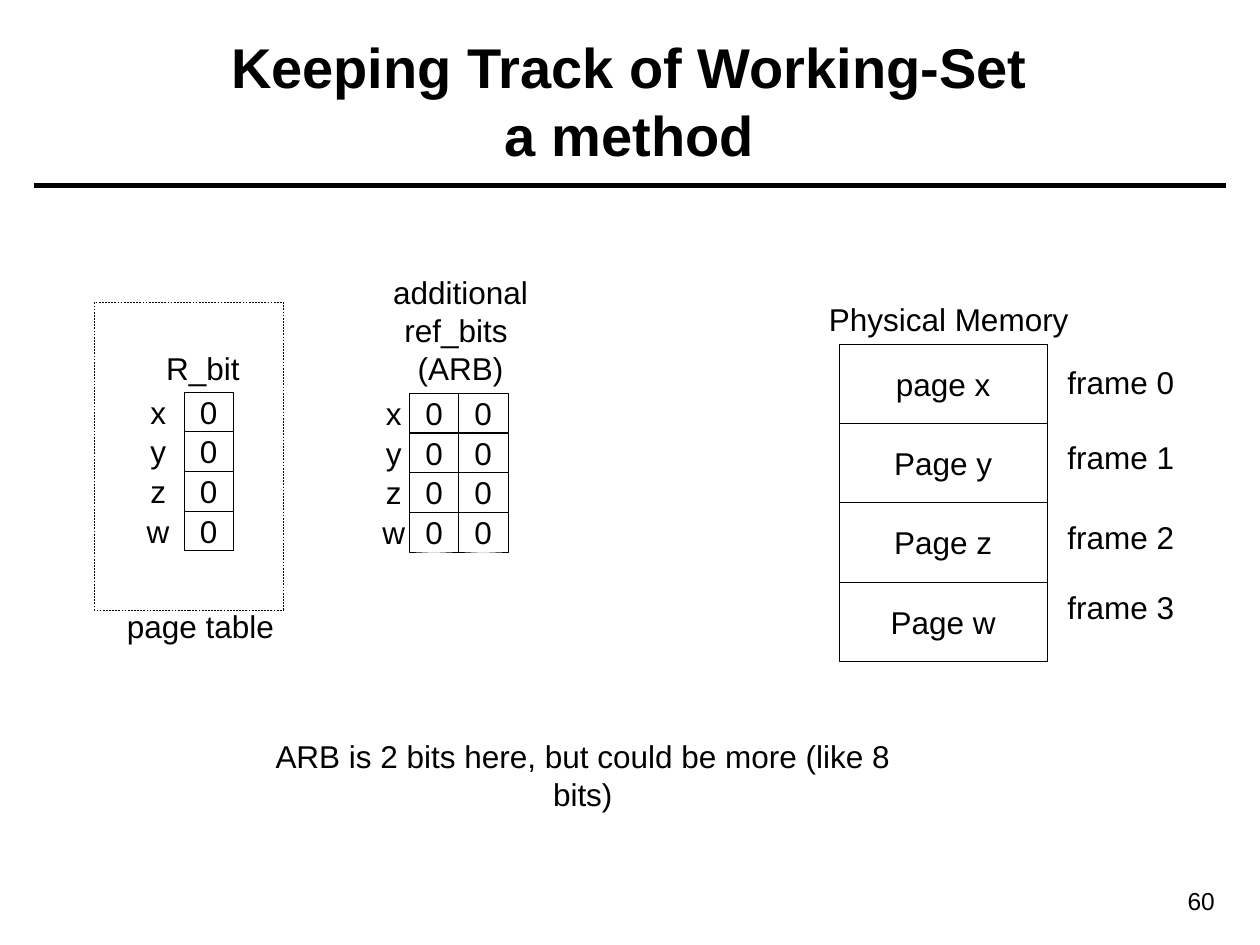
from pptx import Presentation
from pptx.dml.color import RGBColor
from pptx.enum.dml import MSO_LINE
from pptx.enum.shapes import MSO_CONNECTOR, MSO_SHAPE
from pptx.enum.text import MSO_ANCHOR as Anchor, PP_ALIGN as Align
from pptx.oxml.ns import qn
from pptx.util import Inches, Pt
from lxml import etree

COLORS = {"ink": "000000", "paper": "FFFFFF"}
INK = RGBColor.from_string(COLORS["ink"])
BODY = {"size": Pt(18), "name": "Arial", "bold": False}
TITLE = {"size": Pt(32), "name": "Arial", "bold": True}
NUMBER = {"size": Pt(14), "name": "Arial", "bold": False}

deck = Presentation()
deck.slide_width, deck.slide_height = Inches(10), Inches(7.5)
page = deck.slides.add_slide(deck.slide_layouts[6])
page.background.fill.solid()
page.background.fill.fore_color.rgb = RGBColor.from_string(COLORS["paper"])


def write(box, paragraphs, style=BODY, align=Align.CENTER, anchor=Anchor.MIDDLE, wrap=False):
    frame = box.text_frame
    frame.word_wrap = wrap
    frame.vertical_anchor = anchor
    for index, text in enumerate(paragraphs):
        para = frame.add_paragraph() if index else frame.paragraphs[0]
        para.text = text
        para.alignment = align
        for span in para.runs:
            span.font.color.rgb = INK
            for name, value in style.items():
                setattr(span.font, name, value)


def outline(left, top, width, height):
    """Add an unfilled rectangle with a hairline border."""
    box = page.shapes.add_shape(MSO_SHAPE.RECTANGLE, *map(Inches, (left, top, width, height)))
    box.shadow.inherit = False
    box.fill.background()
    box.line.color.rgb = INK
    box.line.width = Pt(0.25)
    return box


# Heading rule
rule = page.shapes.add_connector(
    MSO_CONNECTOR.STRAIGHT, *map(Inches, (0.27, 1.47, 9.73, 1.47)))
rule.line.color.rgb = INK
rule.line.width = Pt(3)
etree.SubElement(rule._element.spPr, qn("a:effectLst"))

# Free-standing text
texts = [
    ((0.35, 0.17, 9.29, 1.25), ["Keeping Track of Working-Set\na method"],
     {"style": TITLE, "anchor": Anchor.MIDDLE, "wrap": True}),
    ((8.7, 6.98, 1.04, 0.34), ["60"], {"style": NUMBER, "align": Align.RIGHT, "wrap": True}),
    ((6.48, 2.33, 2.1, 0.4), ["Physical Memory"], {}),
    ((1.19, 2.72, 0.84, 0.4), ["R_bit"], {}),
    ((0.88, 4.77, 1.42, 0.4), ["page table"], {}),
    ((3.02, 2.12, 1.27, 1), ["additional", "ref_bits \n(ARB)"], {}),
    ((1.82, 5.8, 5.61, 0.4), ["ARB is 2 bits here, but could be more (like 8 bits)"],
     {"wrap": True}),
]
for place, paragraphs, options in texts:
    box = page.shapes.add_textbox(*map(Inches, place))
    write(box, paragraphs, **{"anchor": Anchor.TOP, **options})

# Physical memory: one frame per row
FRAME_HEIGHT = 0.63
frame_pages = ["page x", "Page y", "Page z", "Page w"]
label_tops = [2.83, 3.43, 4.06, 4.62]
for row, (name, label_top) in enumerate(zip(frame_pages, label_tops)):
    write(outline(6.66, 2.73 + row * FRAME_HEIGHT, 1.65, FRAME_HEIGHT), [name])
    label = page.shapes.add_textbox(*map(Inches, (8.37, label_top, 1.05, 0.4)))
    write(label, [f"frame {row}"], anchor=Anchor.TOP)

# Reference bits: page names on the left, bit columns on the right
BIT_WIDTH = 0.39
BIT_HEIGHT = FRAME_HEIGHT / 2
bit_grids = [
    {"names": 1.06, "bits": 1.46, "top": 3.11, "columns": 1},
    {"names": 2.93, "bits": 3.25, "top": 3.12, "columns": 2},
]
for grid in bit_grids:
    for row, name in enumerate("xyzw"):
        top = grid["top"] + row * BIT_HEIGHT
        label = page.shapes.add_textbox(
            *map(Inches, (grid["names"], top, BIT_WIDTH, BIT_HEIGHT)))
        write(label, [name])
        for column in range(grid["columns"]):
            left = grid["bits"] + column * BIT_WIDTH
            write(outline(left, top, BIT_WIDTH, BIT_HEIGHT), ["0"])

page_table = outline(0.75, 2.4, 1.5, 2.44)
page_table.line.dash_style = MSO_LINE.DASH

deck.save("out.pptx")
